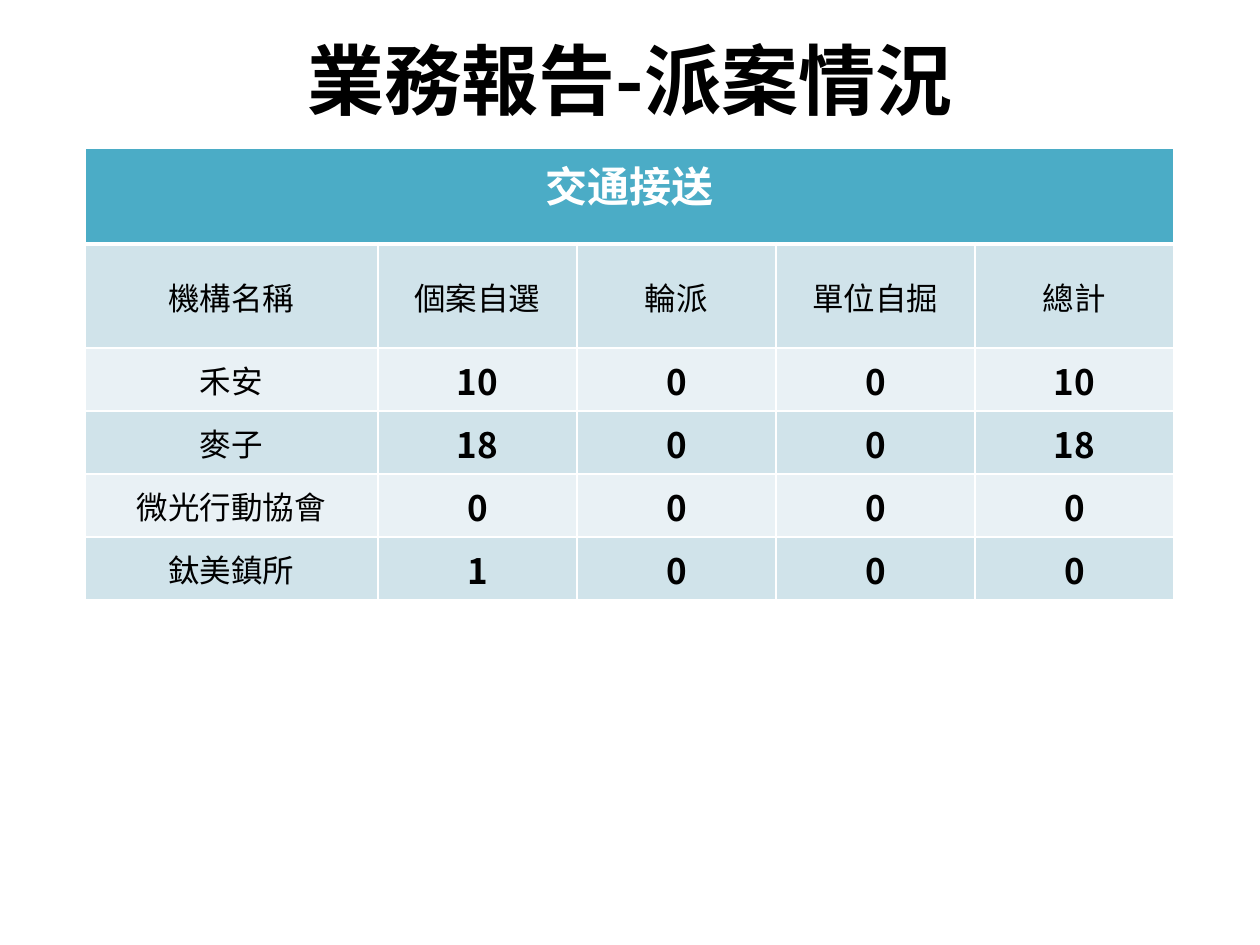
from lxml import etree
from pptx import Presentation, util as u
from pptx.dml.color import RGBColor
from pptx.enum import text
from pptx.oxml import ns

# Content
TITLE = "業務報告-派案情況"
SERVICE = "交通接送"
HEADINGS = ["機構名稱", "個案自選", "輪派", "單位自掘", "總計"]
AGENCIES = [
    ("禾安", 10, 0, 0, 10),
    ("麥子", 18, 0, 0, 18),
    ("微光行動協會", 0, 0, 0, 0),
    ("鈦美鎮所", 1, 0, 0, 0),
]

# Format
FONT = "Noto Sans CJK SC"
TITLE_FONT = dict(size=44, bold=True, color="000000")
SERVICE_FONT = dict(size=24, bold=True, color="FFFFFF")
LABEL_FONT = dict(size=18, bold=False, color="000000")
COUNT_FONT = dict(size=20, bold=True, color="000000")
SERVICE_FILL, BANDS, RULE = "4BACC6", ("D0E3EA", "E9F1F5"), "FFFFFF"

# Layout in px
PX = u.Inches(1) // 126
TITLE_BOX = (63, 0, 1134, 158)
TABLE_LEFT, TABLE_TOP = 85, 148
COLUMNS = [293] + [199] * 4
ROWS = [96, 104] + [63] * len(AGENCIES)


def rgb(value):
    return RGBColor.from_string(value)


def write(frame, words, size, bold, color):
    frame.word_wrap = True
    paragraph = frame.paragraphs[0]
    paragraph.alignment = text.PP_ALIGN.CENTER
    run = paragraph.add_run()
    run.text = str(words)
    for key, value in dict(name=FONT, size=u.Pt(size), bold=bold).items():
        setattr(run.font, key, value)
    run.font.color.rgb = rgb(color)
    east_asian = etree.SubElement(run.font._element, ns.qn("a:ea"))
    east_asian.set("typeface", FONT)


def add_rules(cell, top, bottom):
    properties = cell._tc.get_or_add_tcPr()
    widths = dict(lnL=1, lnR=1, lnT=top, lnB=bottom)
    for place, (side, width) in enumerate(widths.items()):
        line = etree.Element(ns.qn("a:" + side), w=str(u.Pt(width)))
        fill = etree.SubElement(line, ns.qn("a:solidFill"))
        etree.SubElement(fill, ns.qn("a:srgbClr"), val=RULE)
        properties.insert(place, line)


def format_cell(cell, fill, row):
    cell.fill.solid()
    cell.fill.fore_color.rgb = rgb(fill)
    add_rules(cell, top=3 if row == 1 else 1, bottom=3 if row == 0 else 1)
    if row:
        tight = dict(margin_left=PX, margin_right=PX, margin_top=PX, margin_bottom=0,
                     vertical_anchor=text.MSO_ANCHOR.MIDDLE)
        for key, value in tight.items():
            setattr(cell, key, value)


deck = Presentation()
deck.slide_width, deck.slide_height = u.Inches(10), u.Inches(7.5)
slide = deck.slides.add_slide(deck.slide_layouts[6])

# Dispatch table
box = (TABLE_LEFT, TABLE_TOP, sum(COLUMNS), sum(ROWS))
dispatch = slide.shapes.add_table(len(ROWS), len(COLUMNS), *(n * PX for n in box)).table
for column, width in zip(dispatch.columns, COLUMNS):
    column.width = width * PX
for row, height in zip(dispatch.rows, ROWS):
    row.height = height * PX

# Service row across all columns
for c in range(len(COLUMNS)):
    format_cell(dispatch.cell(0, c), SERVICE_FILL, 0)
dispatch.cell(0, 0).merge(dispatch.cell(0, len(COLUMNS) - 1))
write(dispatch.cell(0, 0).text_frame, SERVICE, **SERVICE_FONT)

# Headings and agencies in alternating bands
for r, values in enumerate([HEADINGS] + AGENCIES, start=1):
    for c, value in enumerate(values):
        cell = dispatch.cell(r, c)
        format_cell(cell, BANDS[(r - 1) % 2], r)
        write(cell.text_frame, value, **(LABEL_FONT if r == 1 or c == 0 else COUNT_FONT))

# Title
title = slide.shapes.add_textbox(*(n * PX for n in TITLE_BOX)).text_frame
title.vertical_anchor = text.MSO_ANCHOR.MIDDLE
write(title, TITLE, **TITLE_FONT)

deck.save("out.pptx")
